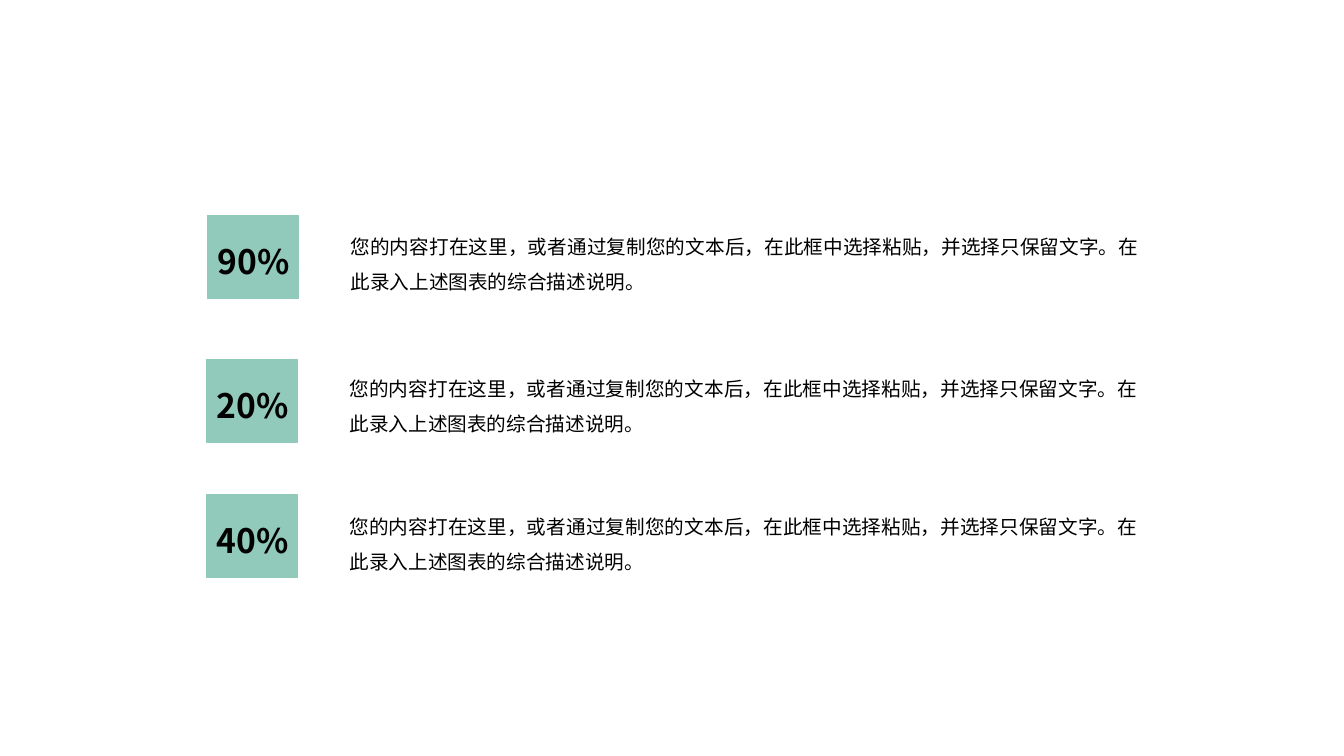
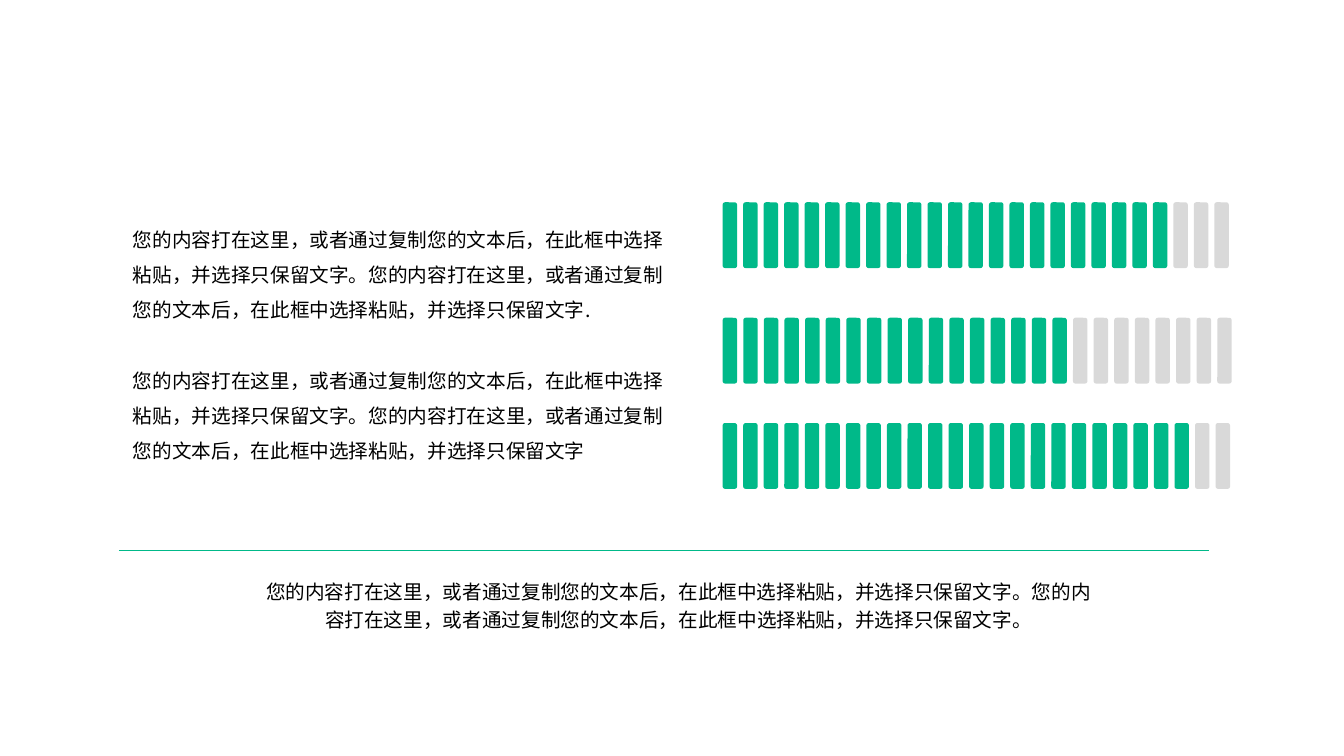
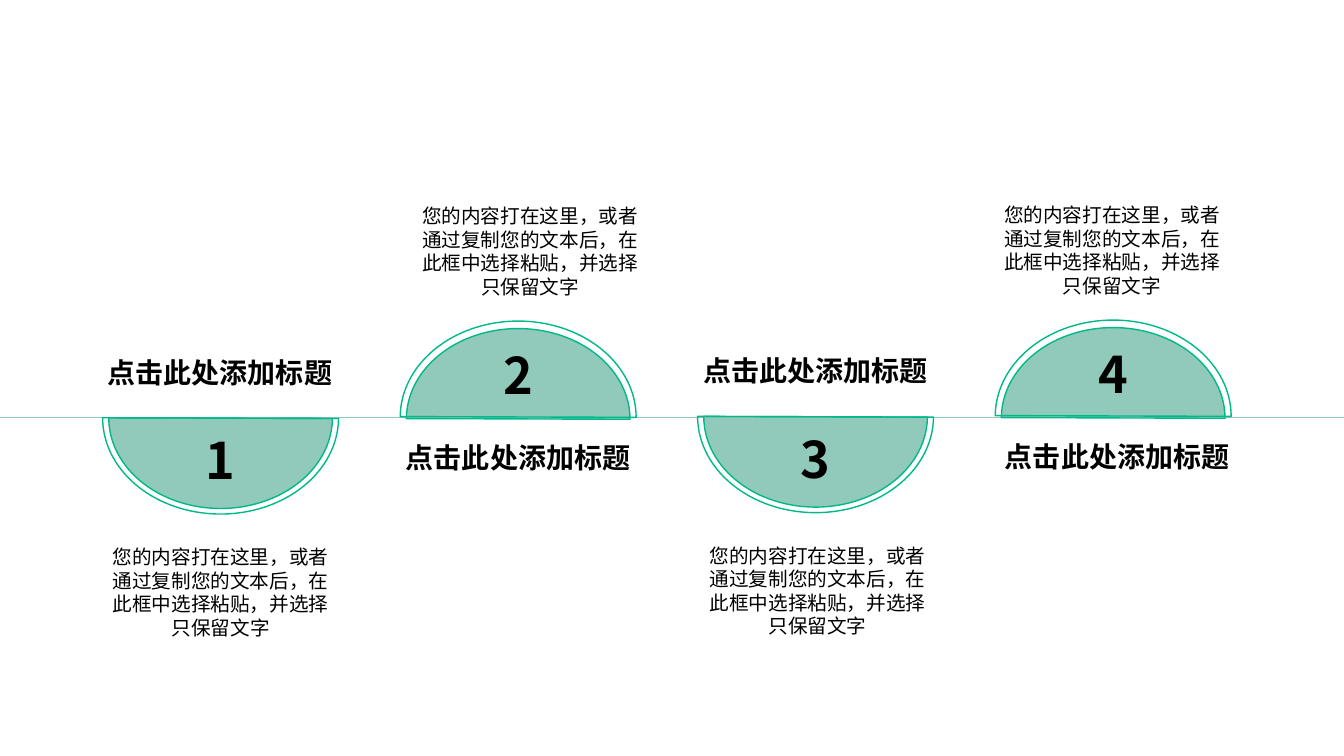
from dataclasses import dataclass

from lxml.etree import SubElement
from pptx import Presentation
from pptx.dml.color import RGBColor
from pptx.enum.shapes import MSO_CONNECTOR, MSO_SHAPE
from pptx.enum.text import MSO_AUTO_SIZE, PP_ALIGN
from pptx.oxml.ns import qn
from pptx.util import Pt


@dataclass(frozen=True)
class Theme:
    """Colours, font and type sizes of the deck."""

    font: str = "Noto Sans CJK SC"
    ink: str = "000000"
    mint: str = "91C9BA"
    green: str = "00B989"
    grey: str = "D9D9D9"
    body: int = 14
    head: int = 20
    rate: int = 24
    digit: int = 36
    wide: int = 960
    high: int = 540


THEME = Theme()
SHORT = "您的内容打在这里，或者通过复制您的文本后，在此框中选择粘贴，并选择只保留文字"
FULL = SHORT + "。"
NOTE = FULL + "在此录入上述图表的综合描述说明。"
HEAD = "点击此处添加标题"


def write(slide, text, box, size=THEME.body, bold=False, align=PP_ALIGN.CENTER,
          lead=1.0, gap=0, inset=(7.2, 3.6), grow=True):
    """Put text, one paragraph per line, in a box given in points."""
    frame = slide.shapes.add_textbox(*map(Pt, box)).text_frame
    frame.word_wrap = True
    frame.auto_size = MSO_AUTO_SIZE.SHAPE_TO_FIT_TEXT if grow else MSO_AUTO_SIZE.NONE
    frame.margin_left = frame.margin_right = Pt(inset[0])
    frame.margin_top = frame.margin_bottom = Pt(inset[1])
    for i, line in enumerate(text.split("\n")):
        para = frame.add_paragraph() if i else frame.paragraphs[0]
        para.alignment = align
        para.line_spacing = lead
        para.space_before = Pt(gap if i else 0)
        run = para.add_run()
        run.text = line
        font = run.font
        font.size, font.bold, font.name = Pt(size), bold, THEME.font
        font.color.rgb = RGBColor.from_string(THEME.ink)
        SubElement(font._element, qn("a:ea"), typeface=THEME.font)


def draw(slide, kind, box, fill=None, line=None):
    """Add a flat preset shape with an optional fill and outline."""
    shape = slide.shapes.add_shape(kind, *map(Pt, box))
    shape.shadow.inherit = False
    if fill:
        shape.fill.solid()
        shape.fill.fore_color.rgb = RGBColor.from_string(fill)
    else:
        shape.fill.background()
    if line:
        shape.line.color.rgb = RGBColor.from_string(line)
        shape.line.width = Pt(1)
    else:
        shape.line.fill.background()
    return shape


def rule(slide, left, right, y, tint):
    """Draw a level line."""
    line = slide.shapes.add_connector(
        MSO_CONNECTOR.STRAIGHT, Pt(left), Pt(y), Pt(right), Pt(y))
    line.line.color.rgb = RGBColor.from_string(tint)
    line.line.width = Pt(1)
    SubElement(line._element.spPr, qn("a:effectLst"))


def rate_row(slide, left, top, drop, rate):
    """Place a rate tile and its note from the tile corner."""
    draw(slide, MSO_SHAPE.RECTANGLE, (left, top, 64.8, 59), THEME.mint, THEME.mint)
    write(slide, rate, (left - 4, top + 14.4, 73.4, 36), size=THEME.rate, bold=True)
    write(slide, NOTE, (left + 95, top + drop, 577.4, 58.3),
          align=PP_ALIGN.JUSTIFY, lead=1.5)


def bar_row(slide, left, top, width, full, count=25, bar=10.3, high=47):
    """Spread equal bars over a width, the first ones filled."""
    step = (width - bar) / (count - 1)
    for i in range(count):
        draw(slide, MSO_SHAPE.ROUNDED_RECTANGLE, (left + i * step, top, bar, high),
             THEME.green if i < full else THEME.grey)


def dome(slide, x, y, width, high, up, fill=None):
    """Draw a half oval centred on a point."""
    shape = draw(slide, MSO_SHAPE.CHORD, (x - width / 2, y - high / 2, width, high),
                 fill, THEME.green)
    shape.adjustments[0], shape.adjustments[1] = 54.218, 162
    shape.rotation = 90 if up else 270


def step_part(slide, x, y, up, digit, head_dx, body_dx):
    """Place one step of the time line around its mid point."""
    lift = 0.7 if up else 0
    dome(slide, x, y + lift, 129.6, 159.8, up, THEME.mint)
    dome(slide, x, y - lift, 137.5, 168.5, up)
    digit_y, head_y, body_y = (-56.5, 12, -156.6) if up else (4.5, -48.3, 87.3)
    write(slide, digit, (x - 31.7, y + digit_y, 63.4, 51), size=THEME.digit, bold=True)
    write(slide, HEAD, (x - 103.7 + head_dx, y + head_y, 207.4, 31.7),
          size=THEME.head, bold=True)
    write(slide, SHORT, (x - 85.7 + body_dx, y + body_y, 171.4, 75))


def rates(slide):
    """Build the slide of three rates."""
    rows = [(148.3, 154.1, 1.4, "90%"), (147.6, 257, 0, "20%"),
            (147.6, 353.5, 2.2, "40%")]
    for row in rows:
        rate_row(slide, *row)


def bars(slide):
    """Build the slide of bar rows and notes."""
    for top, width, full in [(144.5, 361.5, 22), (227, 363.6, 17), (302.2, 362.4, 23)]:
        bar_row(slide, 516.2, top, width, full)
    rule(slide, 85, 863.3, 393.1, THEME.green)
    write(slide, FULL * 2, (177.1, 407.5, 615.6, 68.4), lead=1.2)
    write(slide, FULL + SHORT + ".\n" + FULL + SHORT, (75.6, 144.7, 426.2, 222.5),
          align=PP_ALIGN.LEFT, lead=1.5, gap=25.2, inset=(19.4, 9.4), grow=False)


def steps(slide):
    """Build the slide of four steps on a line."""
    rule(slide, 0, THEME.wide, 298.1, THEME.mint)
    parts = [(298.4, -0.5, 0), (298.8, 0, 8.6), (297.4, 0, 1.4), (298.1, 2.9, -0.7)]
    for i, (y, head_dx, body_dx) in enumerate(parts):
        step_part(slide, 157.6 + i * 212.5, y, i % 2 == 1, str(i + 1), head_dx, body_dx)


def main():
    """Build and save the deck."""
    deck = Presentation()
    deck.slide_width, deck.slide_height = Pt(THEME.wide), Pt(THEME.high)
    for build in (rates, bars, steps):
        build(deck.slides.add_slide(deck.slide_layouts[6]))
    deck.save("out.pptx")


if __name__ == "__main__":
    main()
